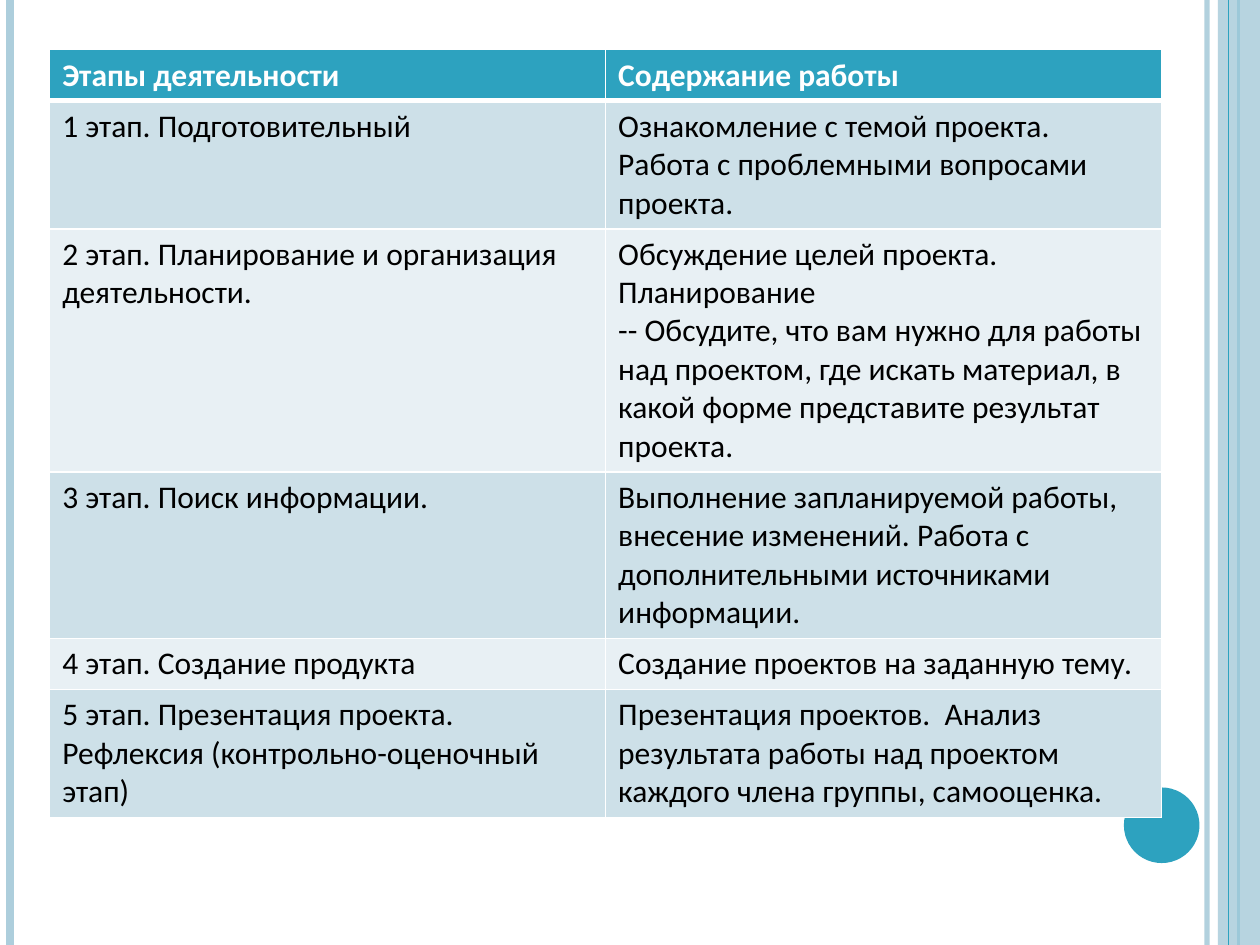
import pptx
import pptx.util
import pptx.dml.color
import pptx.enum.shapes
import pptx.oxml
import pptx.oxml.ns
from lxml import etree

Pt = pptx.util.Pt
qn = pptx.oxml.ns.qn

HEADINGS = ("Этапы деятельности", "Содержание работы")
STAGES = [
    ("1 этап. Подготовительный",
     "Ознакомление с темой проекта.  Работа с проблемными вопросами проекта."),
    ("2 этап. Планирование и организация деятельности.",
     "Обсуждение целей проекта.\nПланирование\n"
     "-- Обсудите, что вам нужно для работы над проектом, где искать материал, "
     "в какой форме представите результат проекта."),
    ("3 этап. Поиск информации.",
     "Выполнение запланируемой работы, внесение изменений. "
     "Работа с дополнительными источниками информации."),
    ("4 этап. Создание продукта", "Создание проектов на заданную тему."),
    ("5 этап. Презентация проекта. Рефлексия (контрольно-оценочный этап)",
     "Презентация проектов.  Анализ результата работы над проектом "
     "каждого члена группы, самооценка."),
]

THEME = {
    "font": "Calibri", "size": 18,
    "accent": "2DA2BF", "pale": "ADCEDC",
    "bands": ("CDE0E8", "E8F0F4"),
    "text": "000000", "light": "FFFFFF",
}

SLIDE_W, SLIDE_H = 720, 540
# x, colour, width, opacity in percent
LINES_BEHIND_BAND = [
    (689.76, THEME["pale"], 3, 93),
    (5.76, THEME["pale"], 4.5, 100),
    (707.76, THEME["accent"], 1.5, 100),
]
LINE_OVER_BAND = (702, THEME["accent"], 0.75, 100)
BAND_X, BAND_OPACITY = 696, 87
DISC_X, DISC_Y, DISC_SIZE = 642.24, 450, 43.2
TABLE_X, TABLE_Y, COLUMN_W, ROW_H = 28.4, 28.4, 317.7, 29.2


def rgb(colour):
    return pptx.dml.color.RGBColor.from_string(colour)


def set_opacity(element, percent):
    colour = next(element.iter(qn("a:srgbClr")))
    etree.SubElement(colour, qn("a:alpha"), val=str(percent * 1000))


def add_vertical_line(slide, x, colour, width, opacity):
    line = slide.shapes.add_connector(
        pptx.enum.shapes.MSO_CONNECTOR.STRAIGHT, Pt(x), 0, Pt(x), Pt(SLIDE_H))
    line.line.color.rgb = rgb(colour)
    line.line.width = Pt(width)
    properties = line._element.spPr
    if opacity < 100:
        set_opacity(properties, opacity)
    etree.SubElement(properties, qn("a:effectLst"))


def add_plain_shape(slide, kind, box, colour):
    shape = slide.shapes.add_shape(kind, *map(Pt, box))
    shape.shadow.inherit = False
    shape.fill.solid()
    shape.fill.fore_color.rgb = rgb(colour)
    shape.line.fill.background()
    return shape


def set_borders(cell, bottom_width):
    """Draw light borders; they must come before the fill in the cell's XML."""
    properties = cell._tc.get_or_add_tcPr()
    widths = {"lnL": 1, "lnR": 1, "lnT": 1, "lnB": bottom_width}
    for position, (side, width) in enumerate(widths.items()):
        border = etree.Element(qn(f"a:{side}"), w=str(Pt(width)))
        fill = etree.SubElement(border, qn("a:solidFill"))
        etree.SubElement(fill, qn("a:srgbClr"), val=THEME["light"])
        properties.insert(position, border)


def fill_cell(cell, text, fill, colour, bold=False):
    cell.text = text
    cell.fill.solid()
    cell.fill.fore_color.rgb = rgb(fill)
    for paragraph in cell.text_frame.paragraphs:
        paragraph.font.name = THEME["font"]
        paragraph.font.size = Pt(THEME["size"])
        paragraph.font.bold = bold
        paragraph.font.color.rgb = rgb(colour)


def add_decoration(slide):
    for line in LINES_BEHIND_BAND:
        add_vertical_line(slide, *line)
    shapes = pptx.enum.shapes.MSO_SHAPE
    band = add_plain_shape(slide, shapes.RECTANGLE,
                           (BAND_X, 0, SLIDE_W - BAND_X, SLIDE_H), THEME["pale"])
    set_opacity(band._element.spPr, BAND_OPACITY)
    add_vertical_line(slide, *LINE_OVER_BAND)
    add_plain_shape(slide, shapes.OVAL,
                    (DISC_X, DISC_Y, DISC_SIZE, DISC_SIZE), THEME["accent"])


def add_stage_table(slide):
    rows = [HEADINGS, *STAGES]
    columns = len(HEADINGS)
    table = slide.shapes.add_table(
        len(rows), columns, Pt(TABLE_X), Pt(TABLE_Y),
        Pt(COLUMN_W * columns), Pt(ROW_H * len(rows))).table
    for r, texts in enumerate(rows):
        heading = r == 0
        fill = THEME["accent"] if heading else THEME["bands"][(r - 1) % 2]
        colour = THEME["light"] if heading else THEME["text"]
        for c, text in enumerate(texts):
            cell = table.cell(r, c)
            fill_cell(cell, text, fill, colour, bold=heading)
            set_borders(cell, bottom_width=3 if heading else 1)


def main():
    presentation = pptx.Presentation()
    presentation.slide_width = Pt(SLIDE_W)
    presentation.slide_height = Pt(SLIDE_H)
    slide = presentation.slides.add_slide(presentation.slide_layouts[6])
    add_decoration(slide)
    add_stage_table(slide)
    presentation.save("out.pptx")


if __name__ == "__main__":
    main()
